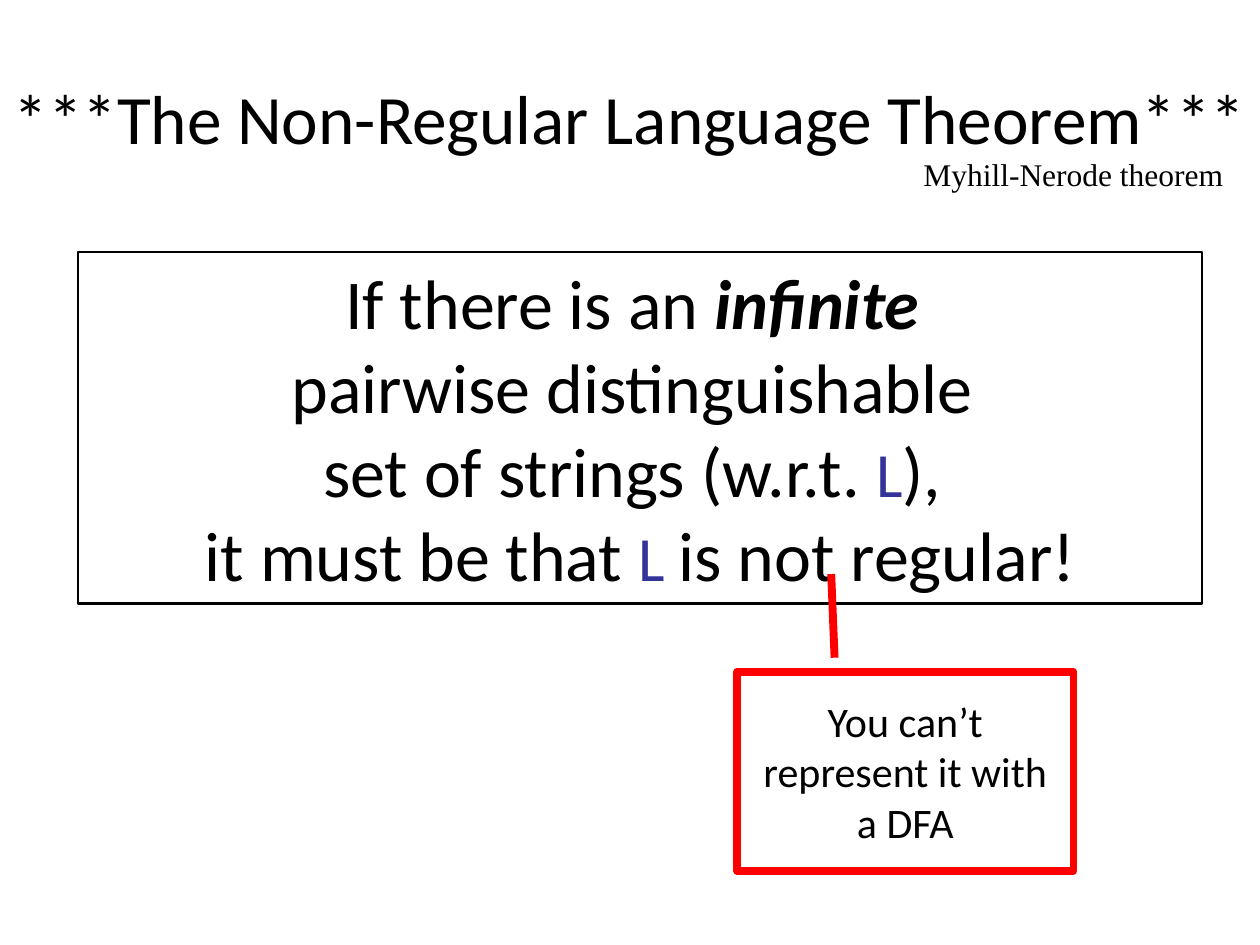
import dataclasses

import pptx
import pptx.dml.color
import pptx.enum.shapes
import pptx.enum.text
import pptx.util

ALIGN = pptx.enum.text.PP_ALIGN
SHAPE = pptx.enum.shapes.MSO_SHAPE


@dataclasses.dataclass(frozen=True)
class Theme:
    ink: str = "000000"
    paper: str = "FFFFFF"
    symbol: str = "333399"
    alert: str = "FF0000"
    sans: str = "Calibri"
    serif: str = "Times New Roman"
    title: float = 39.6
    body: float = 40
    symbol_size: float = 36
    note: float = 24
    caption: float = 18
    thin: float = 1.5
    thick: float = 4.5


class SlideBuilder:
    COLUMNS, ROWS = 100, 75

    def __init__(self, prs, theme):
        self.theme = theme
        self.cell_w = prs.slide_width / self.COLUMNS
        self.cell_h = prs.slide_height / self.ROWS
        self.slide = prs.slides.add_slide(prs.slide_layouts[6])

    def place(self, col, row, cols, rows):
        return (round(col * self.cell_w), round(row * self.cell_h),
                round(cols * self.cell_w), round(rows * self.cell_h))

    def color(self, value):
        return pptx.dml.color.RGBColor.from_string(value)

    def set_lines(self, sp, lines, size, font, align=ALIGN.CENTER, wrap=True):
        tf = sp.text_frame
        tf.word_wrap = wrap
        tf.vertical_anchor = pptx.enum.text.MSO_ANCHOR.MIDDLE
        for i, line in enumerate(lines):
            p = tf.paragraphs[0] if i == 0 else tf.add_paragraph()
            p.alignment = align
            for text, role in line:
                r = p.add_run()
                r.text = text
                symbol = role == "symbol"
                r.font.name = font
                r.font.size = pptx.util.Pt(self.theme.symbol_size if symbol else size)
                r.font.color.rgb = self.color(self.theme.symbol if symbol else self.theme.ink)
                r.font.bold = r.font.italic = role == "strong"

    def label(self, area, text, size, font, align=ALIGN.CENTER, wrap=True):
        sp = self.slide.shapes.add_textbox(*self.place(*area))
        self.set_lines(sp, [[(text, "plain")]], size, font, align, wrap)

    def frame(self, kind, area, lines, size, line, width, fill=None):
        sp = self.slide.shapes.add_shape(kind, *self.place(*area))
        sp.shadow.inherit = False
        if fill:
            sp.fill.solid()
            sp.fill.fore_color.rgb = self.color(fill)
        else:
            sp.fill.background()
        sp.line.color.rgb = self.color(line)
        sp.line.width = pptx.util.Pt(width)
        self.set_lines(sp, lines, size, self.theme.sans)
        return sp

    def box(self, area, lines):
        t = self.theme
        self.frame(SHAPE.RECTANGLE, area, lines, t.body, t.ink, t.thin)

    def callout(self, area, text, pointer):
        t = self.theme
        sp = self.frame(SHAPE.LINE_CALLOUT_1, area, [[(text, "plain")]],
                        t.note, t.alert, t.thick, t.paper)
        for i, share in enumerate(pointer):
            sp.adjustments[i] = share


def main():
    prs = pptx.Presentation()
    prs.slide_width = pptx.util.Inches(10)
    prs.slide_height = pptx.util.Inches(7.5)
    theme = Theme()
    s = SlideBuilder(prs, theme)

    s.label((-0.7, 3, 101.4, 12.5), "***The Non-Regular Language Theorem***",
            theme.title, theme.sans)
    s.box((6.2, 20, 89.2, 27.9), [
        [("If there is an ", "plain"), ("infinite ", "strong")],
        [("pairwise distinguishable ", "plain")],
        [("set of strings (w.r.t. ", "plain"), ("L", "symbol"), ("), ", "plain")],
        [("it must be that ", "plain"), ("L ", "symbol"), ("is not regular!", "plain")],
    ])
    s.label((72.3, 11.8, 26.1, 4), "Myhill-Nerode theorem",
            theme.caption, theme.serif, ALIGN.LEFT, wrap=False)
    s.callout((58.5, 53.3, 26.7, 15.8), "You can’t represent it with a DFA",
              (-0.07, 0.29, -0.49, 0.28))

    prs.save("out.pptx")


if __name__ == "__main__":
    main()
